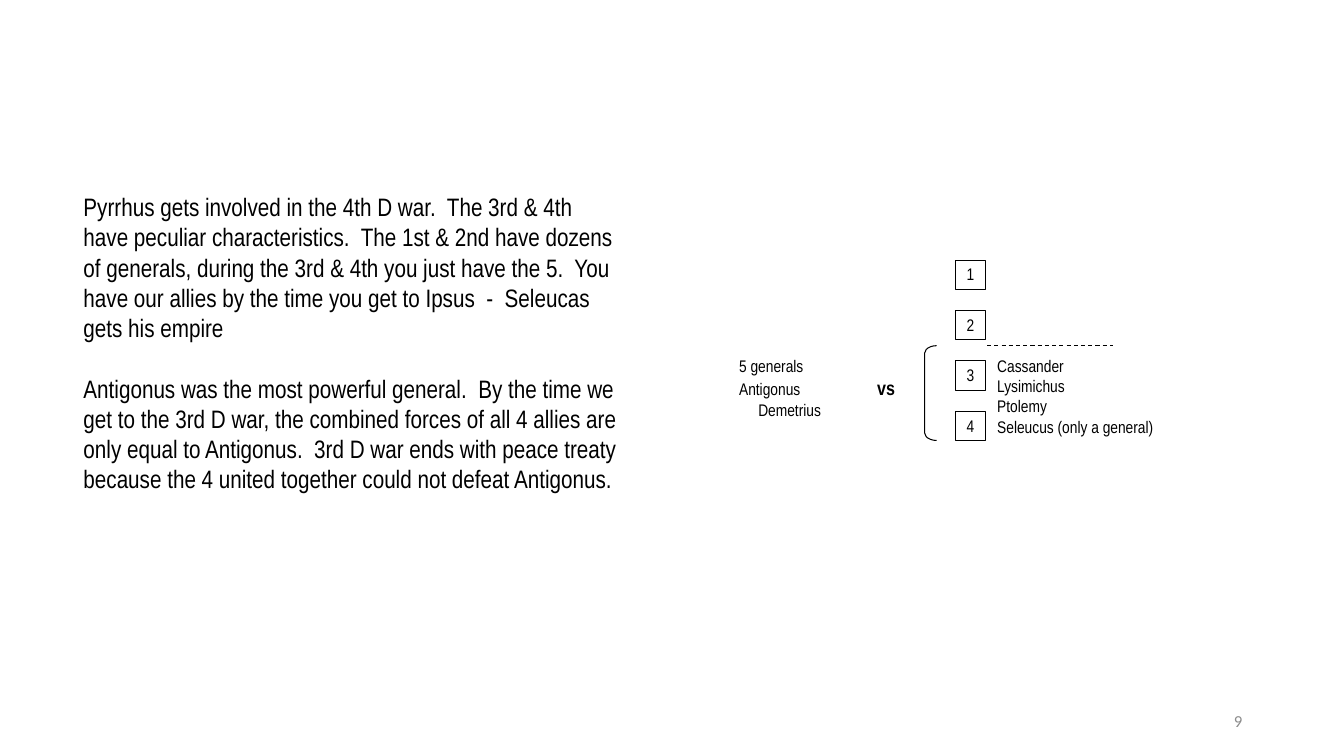
"""Builds a slide with a text at left and a diagram at right."""
from lxml.etree import SubElement
from pptx import Presentation
from pptx.dml.color import RGBColor
from pptx.enum.dml import MSO_LINE
from pptx.enum.shapes import MSO_CONNECTOR, MSO_SHAPE
from pptx.enum.text import MSO_ANCHOR, PP_ALIGN
from pptx.oxml.ns import qn
from pptx.util import Inches, Pt


def ink(line, color="000000"):
    line.color.rgb = RGBColor.from_string(color)
    line.width = Pt(0.75)


def write(shape, text, size=12, font="Arial Narrow", color="000000",
          align=PP_ALIGN.LEFT, anchor=MSO_ANCHOR.TOP, inset=0.04, gap=0):
    frame = shape.text_frame
    frame.word_wrap = True
    frame.vertical_anchor = anchor
    if inset is not None:
        frame.margin_left = frame.margin_right = Inches(inset)
        frame.margin_top = frame.margin_bottom = Inches(inset)
    for i, line in enumerate(text.split("\n")):
        para = frame.add_paragraph() if i else frame.paragraphs[0]
        para.alignment = align
        if i and gap:
            para.space_before = Pt(gap)
        run = para.add_run()
        run.text = line
        run.font.size = Pt(size)
        run.font.name = font
        run.font.color.rgb = RGBColor.from_string(color)
    return frame.paragraphs


deck = Presentation()
deck.slide_width, deck.slide_height = Inches(13.33), Inches(7.5)
shapes = deck.slides.add_slide(deck.slide_layouts[6]).shapes

page = shapes.add_textbox(Inches(9.42), Inches(6.95), Inches(3), Inches(0.4))
write(page, "9", font="Calibri", color="8C8C8C", align=PP_ALIGN.RIGHT,
      anchor=MSO_ANCHOR.MIDDLE, inset=None)

story = shapes.add_textbox(Inches(0.73), Inches(1.85), Inches(5.54), Inches(3.33))
write(story, "Pyrrhus gets involved in the 4th D war.  The 3rd & 4th have peculiar "
      "characteristics.  The 1st & 2nd have dozens of generals, during the 3rd & 4th "
      "you just have the 5.  You have our allies by the time you get to Ipsus  -  "
      "Seleucas gets his empire\n"
      "Antigonus was the most powerful general.  By the time we get to the 3rd D war, "
      "the combined forces of all 4 allies are only equal to Antigonus.  3rd D war ends "
      "with peace treaty because the 4 united together could not defeat Antigonus.",
      size=18, inset=None, gap=21.6)

for i in range(4):
    war = shapes.add_shape(MSO_SHAPE.RECTANGLE, Inches(9.48), Inches(2.58 + 0.5 * i),
                           Inches(0.29), Inches(0.29))
    war.shadow.inherit = False
    war.fill.background()
    ink(war.line)
    write(war, str(i + 1), align=PP_ALIGN.CENTER)

allies = shapes.add_textbox(Inches(9.85), Inches(3.49), Inches(1.69), Inches(0.88))
write(allies, "Cassander\nLysimichus\nPtolemy\nSeleucus (only a general)")

rule = shapes.add_connector(MSO_CONNECTOR.STRAIGHT, Inches(9.79), Inches(3.43),
                            Inches(11.04), Inches(3.43))
ink(rule.line)
rule.line.dash_style = MSO_LINE.DASH
SubElement(rule.element.spPr, qn("a:effectLst"))

brace = shapes.add_shape(MSO_SHAPE.LEFT_BRACKET, Inches(9.17), Inches(3.43),
                         Inches(0.12), Inches(0.94))
brace.adjustments[0] = 0.625
brace.shadow.inherit = False
brace.fill.background()
ink(brace.line)

foes = shapes.add_textbox(Inches(7.29), Inches(3.49), Inches(1.69), Inches(0.88))
top, mid, last = write(foes, "5 generals\nAntigonus\t\nDemetrius")
tabs = SubElement(mid._p.get_or_add_pPr(), qn("a:tabLst"))
SubElement(tabs, qn("a:tab"), pos=str(Inches(1.37)), algn="l")
versus = mid.add_run()
versus.text = "vs"
versus.font.size = Pt(14)
versus.font.bold = True
versus.font.name = "Arial Narrow"
versus.font.color.rgb = RGBColor.from_string("000000")
last._p.get_or_add_pPr().set("marL", str(Inches(0.19)))

deck.save("out.pptx")
